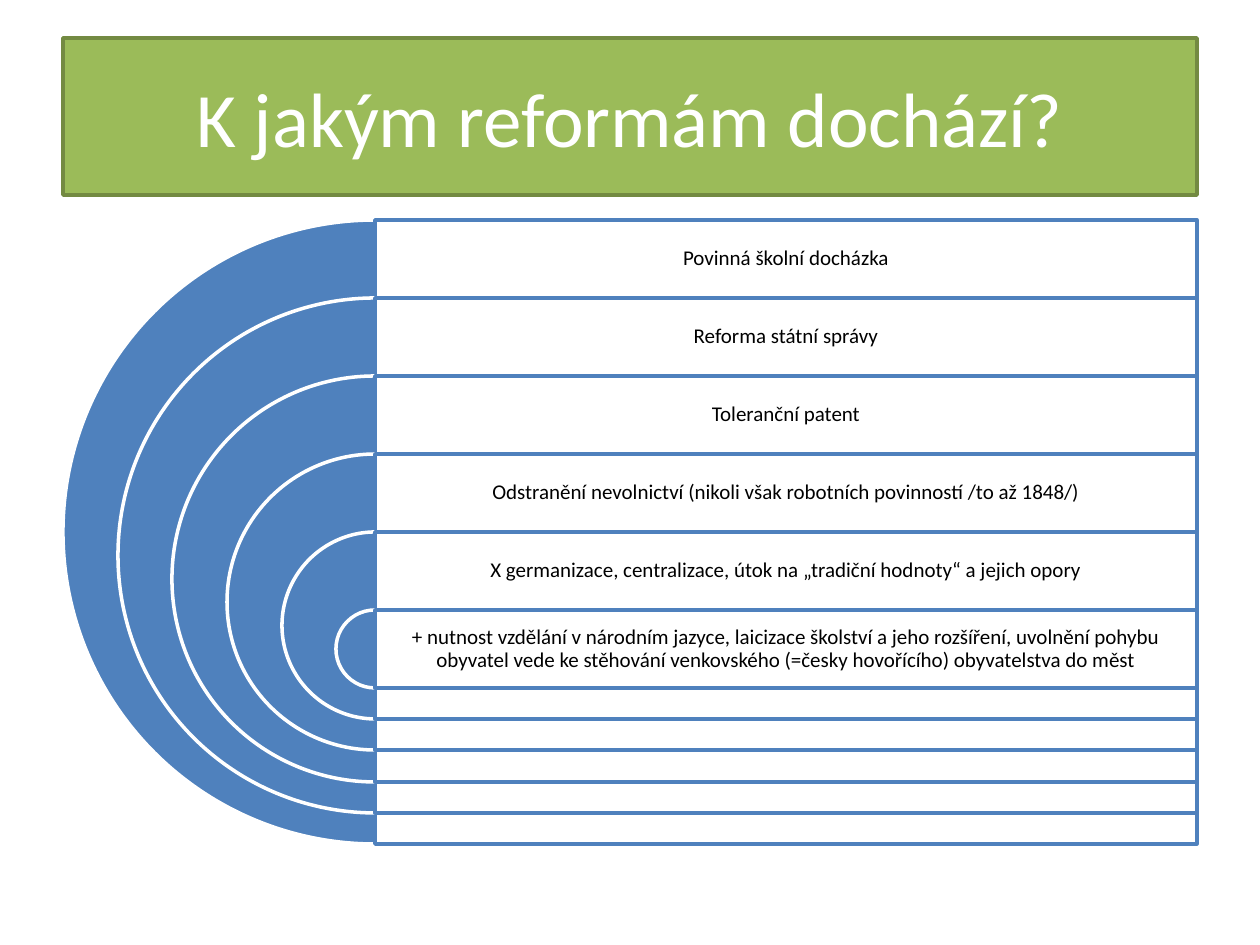
from lxml import etree
from pptx import Presentation
from pptx import util as u
from pptx.dml.color import RGBColor
from pptx.enum import shapes, text
from pptx.oxml.ns import qn

GREEN = RGBColor(0x9B, 0xBB, 0x59)
DARK_GREEN = RGBColor(0x73, 0x8A, 0x42)
BLUE = RGBColor(0x4F, 0x81, 0xBD)
WHITE = RGBColor(0xFF, 0xFF, 0xFF)
BLACK = RGBColor(0x00, 0x00, 0x00)

REFORMS = [
    "Povinná školní docházka",
    "Reforma státní správy",
    "Toleranční patent",
    "Odstranění nevolnictví (nikoli však robotních povinností /to až 1848/)",
    "X germanizace, centralizace, útok na „tradiční hodnoty“ a jejich opory",
    "+ nutnost vzdělání v národním jazyce, laicizace školství a jeho rozšíření, "
    "uvolnění pohybu obyvatel vede ke stěhování venkovského (=česky hovořícího) "
    "obyvatelstva do měst",
]


def px(n):
    return u.Emu(round(n * 914400 / 126))


def paint(sp, fill, line):
    sp.fill.solid()
    sp.fill.fore_color.rgb = fill
    sp.line.color.rgb = line
    sp.line.width = u.Pt(2)
    sp.shadow.inherit = False


prs = Presentation()
prs.slide_width, prs.slide_height = px(1260), px(945)
s = prs.slides.add_slide(prs.slide_layouts[5])

# Title banner
title = s.shapes.title
title.left, title.top, title.width, title.height = px(63), px(38), px(1134), px(157)
paint(title, GREEN, DARK_GREEN)
title.text_frame.text = "K jakým reformám dochází?"
title.text_frame.vertical_anchor = text.MSO_ANCHOR.MIDDLE
p = title.text_frame.paragraphs[0]
p.alignment = text.PP_ALIGN.CENTER
p.font.name, p.font.size = "Calibri", u.Pt(44)
p.font.color.rgb = WHITE

# Nested half discs, each with a panel as tall as the disc and a label on top
AXIS, TOP, ROW, PANEL_W, DISC = 375, 220, 78, 822, 624
diagram = s.shapes.add_group_shape().shapes
for i, reform in enumerate(REFORMS):
    y = TOP + i * ROW
    size = round(DISC * (1 - 0.175 * i))

    disc = diagram.add_shape(shapes.MSO_SHAPE.PIE, px(AXIS - size // 2), px(y),
                             px(size), px(size))
    disc.adjustments[0], disc.adjustments[1] = 54, 162  # 90 to 270 degrees
    paint(disc, BLUE, WHITE)

    panel = diagram.add_shape(shapes.MSO_SHAPE.RECTANGLE, px(AXIS), px(y),
                              px(PANEL_W), px(size))
    paint(panel, WHITE, BLUE)
    color = panel.fill._xPr.find(qn("a:solidFill"))[0]
    etree.SubElement(color, qn("a:alpha")).set("val", "90000")

    label = diagram.add_textbox(px(AXIS), px(y), px(PANEL_W), px(ROW))
    tf = label.text_frame
    tf.word_wrap = True
    tf.vertical_anchor = text.MSO_ANCHOR.MIDDLE
    tf.margin_left = tf.margin_right = tf.margin_top = tf.margin_bottom = px(6)
    tf.text = reform
    p = tf.paragraphs[0]
    p.alignment = text.PP_ALIGN.CENTER
    p.line_spacing = 0.9
    p.font.name, p.font.size = "Calibri", u.Pt(12)
    p.font.color.rgb = BLACK

prs.save("out.pptx")
